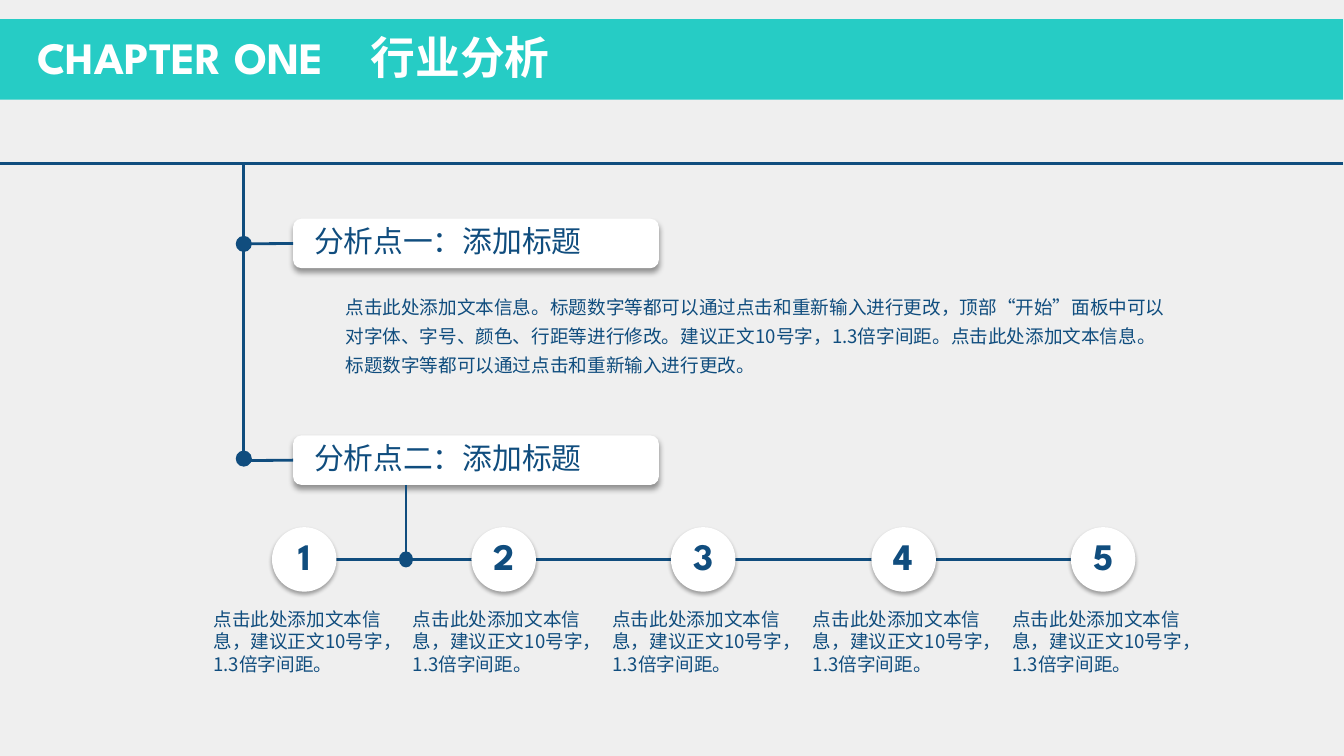
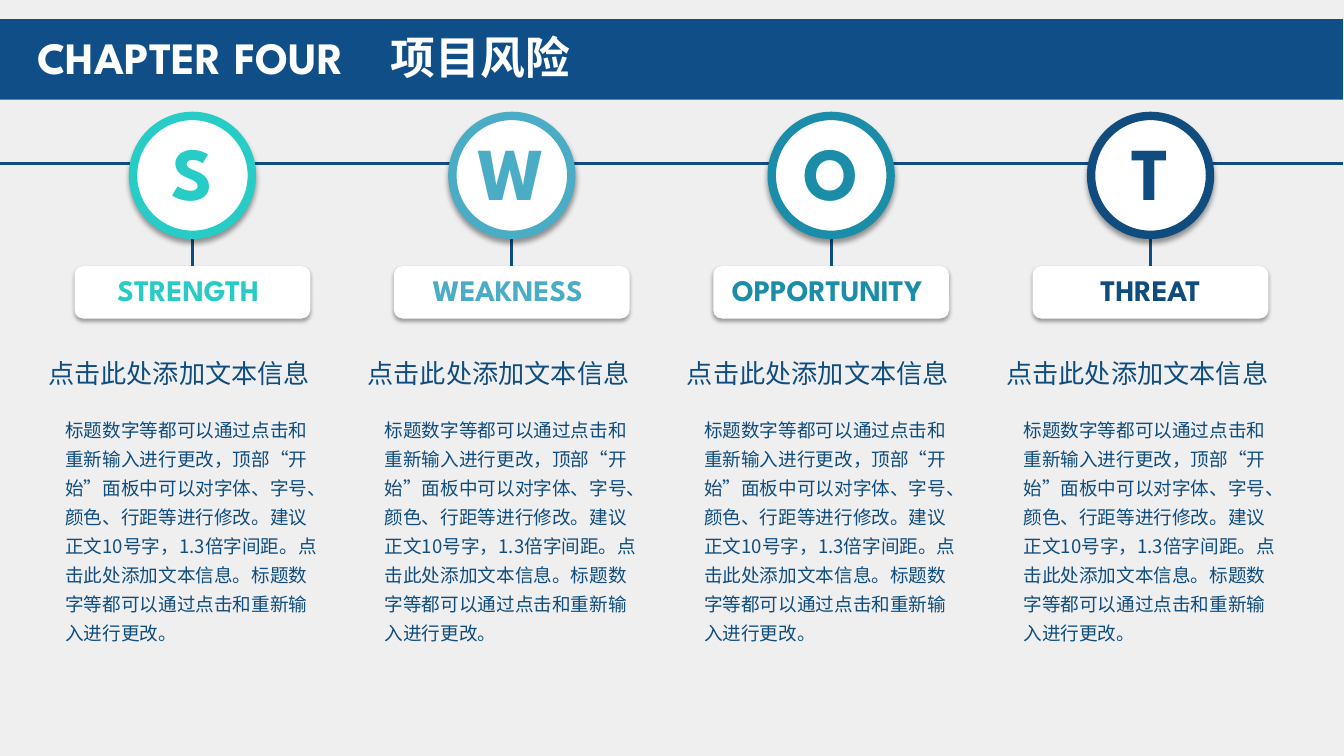
from lxml import etree
from pptx import Presentation
from pptx.dml.color import RGBColor
from pptx.enum.shapes import MSO_CONNECTOR, MSO_SHAPE
from pptx.enum.text import MSO_ANCHOR, MSO_AUTO_SIZE, PP_ALIGN
from pptx.oxml.ns import qn
from pptx.util import Pt

RECT, CARD, OVAL = MSO_SHAPE.RECTANGLE, MSO_SHAPE.ROUNDED_RECTANGLE, MSO_SHAPE.OVAL
LINE = MSO_CONNECTOR.STRAIGHT
MID, GROW, FIXED = MSO_ANCHOR.MIDDLE, MSO_AUTO_SIZE.SHAPE_TO_FIT_TEXT, MSO_AUTO_SIZE.NONE
LEFT, CENTER = PP_ALIGN.LEFT, PP_ALIGN.CENTER
PX = 9144  # 100 px to the inch

# Content
ONE = {
    "title": ("CHAPTER ONE", "行业分析"), "band": "teal", "tab": 331,
    "points": ["分析点一：添加标题", "分析点二：添加标题"],
    "body": "点击此处添加文本信息。标题数字等都可以通过点击和重新输入进行更改，"
            "顶部“开始”面板中可以对字体、字号、颜色、行距等进行修改。"
            "建议正文10号字，1.3倍字间距。点击此处添加文本信息。"
            "标题数字等都可以通过点击和重新输入进行更改。",
    "steps": ["1", "2", "3", "4", "5"],
    "note": "点击此处添加文本信息，建议正文10号字，1.3倍字间距。",
}
FOUR = {
    "title": ("CHAPTER FOUR", "项目风险"), "band": "blue", "tab": 351,
    # letter, label, colour, label shift
    "parts": [("S", "STRENGTH", "teal", -4), ("W", "WEAKNESS", "sky", -4),
              ("O", "OPPORTUNITY", "sea", -4), ("T", "THREAT", "navy", 0)],
    "head": "点击此处添加文本信息",
    "body": "标题数字等都可以通过点击和重新输入进行更改，顶部“开始”面板中可以"
            "对字体、字号、颜色、行距等进行修改。建议正文10号字，1.3倍字间距。"
            "点击此处添加文本信息。标题数字等都可以通过点击和重新输入进行更改。",
}

# Theme
SPARTAN, NOTO = "League Spartan", "Noto Sans CJK SC"
THEME = {
    "color": {"back": "EFEFEF", "white": "FFFFFF", "navy": "104D7E", "blue": "104E87",
              "teal": "26CCC5", "sky": "4BACC6", "sea": "1B8DA8"},
    "text": {  # font values, paragraph values
        "title": ({"name": SPARTAN, "size": Pt(32), "bold": True}, {}),
        "point": ({"name": SPARTAN, "size": Pt(21.3)}, {}),
        "label": ({"name": SPARTAN, "size": Pt(21.3), "bold": True}, {"alignment": CENTER}),
        "step": ({"name": SPARTAN, "size": Pt(26.7), "bold": True},
                 {"alignment": CENTER, "line_spacing": Pt(26.7)}),
        "letter": ({"name": SPARTAN, "size": Pt(53.3), "bold": True},
                   {"alignment": CENTER, "line_spacing": Pt(60)}),
        "head": ({"name": NOTO, "size": Pt(18.7)}, {}),
        "body": ({"name": NOTO, "size": Pt(13.3)}, {"line_spacing": 1.3}),
        "note": ({"name": NOTO, "size": Pt(13.3)}, {"line_spacing": Pt(16)}),
    },
    "shade": {"soft": (35, 3.1, 1.8), "deep": (40, 4, 3)},  # alpha %, blur pt, drop pt
    "rule": Pt(2), "ring": Pt(6),
}


def color(name):
    return RGBColor.from_string(THEME["color"][name])


def put(item, values):
    for key, value in values.items():
        setattr(item, key, value)


def fill_text(frame, text, style, tint):
    font, para = THEME["text"][style]
    line = frame.paragraphs[0]
    put(line, {"alignment": LEFT, **para})
    run = line.add_run()
    run.text = text
    put(run.font, font)
    run.font.color.rgb = color(tint)
    east = etree.SubElement(run.font._element, qn("a:ea"))
    east.set("typeface", NOTO)
    return line


def add_text(slide, box, text, style, tint="navy", wrap=True):
    frame = slide.shapes.add_textbox(*[v * PX for v in box]).text_frame
    put(frame, {"word_wrap": wrap, "auto_size": GROW})
    return fill_text(frame, text, style, tint)


def add_form(slide, kind, box, tint, shade=None, ring=None):
    form = slide.shapes.add_shape(kind, *[v * PX for v in box])
    form.shadow.inherit = False
    form.fill.solid()
    form.fill.fore_color.rgb = color(tint)
    if ring:
        form.line.color.rgb = color(ring)
        form.line.width = THEME["ring"]
    else:
        form.line.fill.background()
    if shade:
        alpha, blur, drop = THEME["shade"][shade]
        glow = etree.SubElement(form.element.spPr.find(qn("a:effectLst")), qn("a:outerShdw"))
        for key, value in {"blurRad": Pt(blur), "dist": Pt(drop),
                           "dir": 90 * 60000, "rotWithShape": 0}.items():
            glow.set(key, str(int(value)))
        black = etree.SubElement(glow, qn("a:srgbClr"), val="000000")
        etree.SubElement(black, qn("a:alpha"), val=str(alpha * 1000))
    return form


def add_line(slide, x1, y1, x2, y2):
    line = slide.shapes.add_connector(LINE, x1 * PX, y1 * PX, x2 * PX, y2 * PX)
    line.line.color.rgb = color("navy")
    line.line.width = THEME["rule"]
    etree.SubElement(line.element.spPr, qn("a:effectLst"))
    return line


def add_base(deck, data):
    """Slide with title band and rule."""
    slide = deck.slides.add_slide(deck.slide_layouts[6])
    add_form(slide, RECT, (0, 19, 1333, 80), data["band"])
    title = add_text(slide, (27, 25, 732, 64), "\t".join(data["title"]), "title", "white")
    tabs = etree.SubElement(title._p.get_or_add_pPr(), qn("a:tabLst"))
    etree.SubElement(tabs, qn("a:tab"), pos=str(data["tab"] * PX), algn="l")
    add_line(slide, 0, 162, 1333, 162)
    return slide


def build_points(deck, data):
    slide = add_base(deck, data)
    add_line(slide, 242, 162, 242, 447)

    # Point cards, each tied to a dot on the trunk
    for i, point in enumerate(data["points"]):
        top = 217 + 215 * i
        card = add_form(slide, CARD, (291, top, 363, 49), "white", "deep")
        tie = add_line(slide, 242, top + 25, 291, top + 24)
        tie.end_connect(card, 1)
        add_form(slide, OVAL, (234, 234 + 213 * i, 16, 16), "navy")
        add_text(slide, (302, top - 1, 340, 46), point, "point")
    add_text(slide, (333, 282, 835, 98), data["body"], "body")

    # Step row
    add_line(slide, 403, 481, 403, 563)
    add_line(slide, 333, 555, 1063, 555)
    add_form(slide, OVAL, (396, 547, 14, 16), "navy")
    for i, step in enumerate(data["steps"]):
        shift = round(198.25 * i)
        disc = add_form(slide, OVAL, (270 + shift, 523, 64, 64), "white", "soft")
        put(disc.text_frame, {"vertical_anchor": MID, "auto_size": FIXED, "margin_left": 0,
                              "margin_right": 0, "margin_top": 0, "margin_bottom": 0})
        fill_text(disc.text_frame, step, "step", "navy")
        add_text(slide, (202 + shift, 598, 199, 77), data["note"], "note")


def build_swot(deck, data):
    slide = add_base(deck, data)
    for i, (letter, label, tint, nudge) in enumerate(data["parts"]):
        left = 74 + 317 * i
        mid = left + 117
        # Label card and stem
        card = add_form(slide, CARD, (left, 264, 234, 52), "white", "soft")
        stem = add_line(slide, mid, 227, mid, 264)
        stem.end_connect(card, 0)
        add_text(slide, (left + nudge, 265, 234, 46), label, "label", tint)
        # Letter ring
        add_form(slide, OVAL, (mid - 59, 115, 118, 118), "white", "deep", tint)
        add_text(slide, (mid - 44, 125, 88, 94), letter, "letter", tint, False)
        # Copy below
        add_text(slide, (left - 36, 350, 281, 42), data["head"], "head", wrap=False)
        add_text(slide, (left - 19, 404, 271, 243), data["body"], "body")


def main():
    deck = Presentation()
    put(deck, {"slide_width": 1334 * PX, "slide_height": 750 * PX})
    back = deck.slide_master.background.fill
    back.solid()
    back.fore_color.rgb = color("back")
    build_points(deck, ONE)
    build_swot(deck, FOUR)
    deck.save("out.pptx")


if __name__ == "__main__":
    main()
